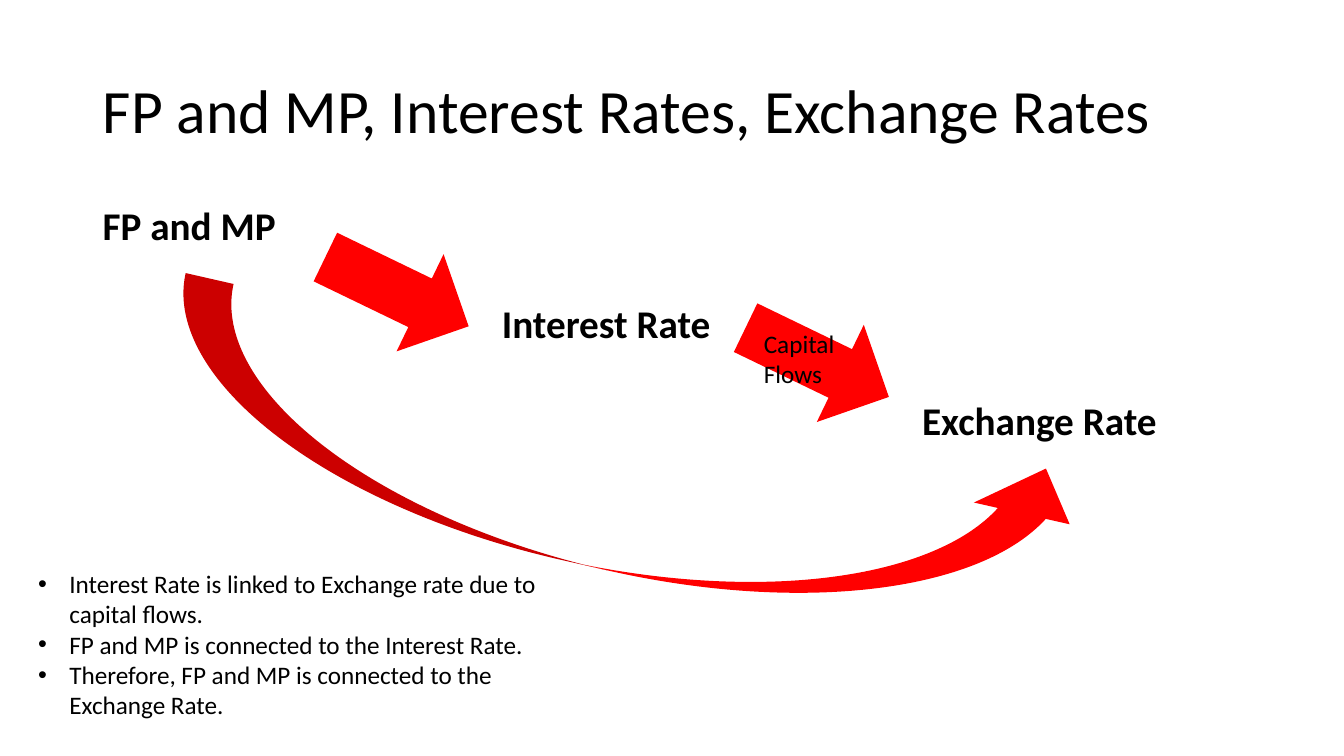
import lxml.etree
import pptx
import pptx.dml.color
import pptx.enum.shapes
import pptx.enum.text
import pptx.oxml.ns
import pptx.util

Cm = pptx.util.Cm
Shape = pptx.enum.shapes.MSO_SHAPE
Anchor = pptx.enum.text.MSO_ANCHOR

TITLE = ("FP and MP, Interest Rates, Exchange Rates", (2.34, 1.02, 29.21, 3.68))
STAGES = [
    ("FP and MP", 2.34, 6.99),
    ("Interest Rate", 12.4, 6.99),
    ("Exchange Rate", 22.99, 8.0),
]
STAGE_TOP, STAGE_STEP, STAGE_HEIGHT = 5.08, 2.46, 2.44
ARROWS = [
    (Shape.RIGHT_ARROW, (8.0, 5.99, 4.01, 2.72), 25.8),
    (Shape.RIGHT_ARROW, (18.59, 7.77, 4.01, 2.72), 25.8),
    (Shape.CURVED_UP_ARROW, (3.84, 9.42, 23.47, 4.95), 12.8),
]
REASONS = [
    "Interest Rate is linked to Exchange rate due to capital flows.",
    "FP and MP is connected to the Interest Rate.",
    "Therefore, FP and MP is connected to the Exchange Rate.",
]
REASONS_AREA = (0.71, 14.2, 13.36, 4.11)
FLOW_LABEL = ("Capital Flows", (19.0, 8.15, 3.45, 1.8))

THEME = {
    "font": "Calibri",
    "text": pptx.dml.color.RGBColor(0, 0, 0),
    "arrow": pptx.dml.color.RGBColor(255, 0, 0),
    "title": 44,
    "stage": 28,
    "note": 18,
    "indent": 0.79,
}


def add_bullet(para):
    properties = para._p.get_or_add_pPr()
    indent = Cm(THEME["indent"])
    properties.set("marL", str(indent))
    properties.set("indent", str(-indent))
    for tag, name, value in (("a:buFont", "typeface", "Arial"), ("a:buChar", "char", "•")):
        element = lxml.etree.SubElement(properties, pptx.oxml.ns.qn(tag))
        element.set(name, value)


def add_text(page, lines, area, size, bold=False, spacing=1.0, anchor=Anchor.TOP, bullets=False):
    frame = page.shapes.add_textbox(*map(Cm, area)).text_frame
    frame.word_wrap = True
    frame.vertical_anchor = anchor
    for index, line in enumerate(lines):
        para = frame.add_paragraph() if index else frame.paragraphs[0]
        para.line_spacing = spacing
        if bullets:
            add_bullet(para)
        span = para.add_run()
        span.text = line
        span.font.name = THEME["font"]
        span.font.size = pptx.util.Pt(size)
        span.font.bold = bold
        span.font.color.rgb = THEME["text"]


def add_arrow(page, kind, area, rotation):
    arrow = page.shapes.add_shape(kind, *map(Cm, area))
    arrow.rotation = rotation
    arrow.shadow.inherit = False
    arrow.fill.solid()
    arrow.fill.fore_color.rgb = THEME["arrow"]
    arrow.line.fill.background()


def main():
    deck = pptx.Presentation()
    deck.slide_width, deck.slide_height = Cm(33.87), Cm(19.05)
    page = deck.slides.add_slide(deck.slide_layouts[6])

    title, title_area = TITLE
    add_text(page, [title], title_area, THEME["title"], spacing=0.9, anchor=Anchor.MIDDLE)
    for index, (name, left, width) in enumerate(STAGES):
        area = (left, STAGE_TOP + index * STAGE_STEP, width, STAGE_HEIGHT)
        add_text(page, [name], area, THEME["stage"], bold=True, spacing=0.9)
    for kind, area, rotation in ARROWS:
        add_arrow(page, kind, area, rotation)
    add_text(page, REASONS, REASONS_AREA, THEME["note"], bullets=True)
    label, label_area = FLOW_LABEL
    add_text(page, [label], label_area, THEME["note"])

    deck.save("out.pptx")


if __name__ == "__main__":
    main()
